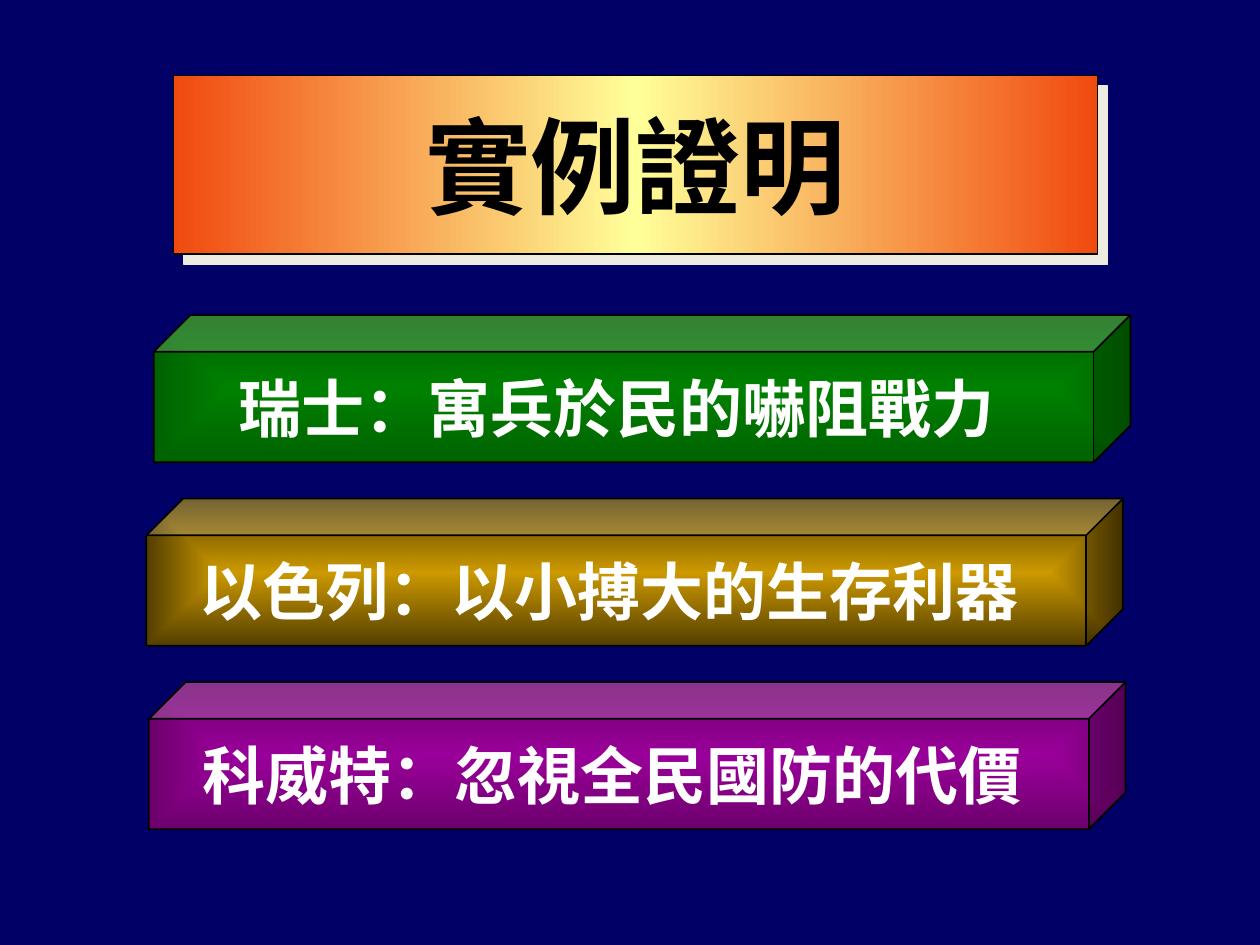
from pptx import Presentation
from pptx.dml.color import RGBColor
from pptx.enum.shapes import MSO_SHAPE
from pptx.enum.text import MSO_ANCHOR, MSO_AUTO_SIZE, PP_ALIGN
from pptx.oxml import parse_xml
from pptx.oxml.ns import nsdecls, qn
from pptx.util import Cm, Pt

FONT = "Noto Sans CJK SC"
LINEAR = '<a:lin ang="0" scaled="1"/>'
FROM_CENTRE = '<a:path path="rect"><a:fillToRect l="50000" t="50000" r="50000" b="50000"/></a:path>'
BAR_WIDTH, BAR_HEIGHT = 19.69, 2.97
FIRST_BAR_TOP, BAR_PITCH = 6.35, 3.7
BARS = [
    (3.1, "瑞士：寓兵於民的嚇阻戰力 ", "008000", "006200"),
    (2.95, "以色列：以小搏大的生存利器 ", "CC9900", "533E00"),
    (3.0, "科威特：忽視全民國防的代價 ", "990099", "6D006D"),
]


def rgb(value):
    """Return the colour for a hex string."""
    return RGBColor.from_string(value)


def fill_gradient(shape, colours, direction):
    """Fill a shape with evenly spaced gradient colours."""
    shape.fill.gradient()
    default = shape._element.spPr.find(qn("a:gradFill"))
    step = 100000 // (len(colours) - 1)
    stops = "".join(
        f'<a:gs pos="{i * step}"><a:srgbClr val="{colour}"/></a:gs>'
        for i, colour in enumerate(colours)
    )
    gradient = parse_xml(
        f'<a:gradFill {nsdecls("a")} rotWithShape="1"><a:gsLst>{stops}</a:gsLst>{direction}</a:gradFill>'
    )
    default.getparent().replace(default, gradient)


def outline(shape, width):
    """Give a shape a black outline and no inherited shadow."""
    shape.line.color.rgb = rgb("000000")
    shape.line.width = Pt(width)
    shape.shadow.inherit = False


def write(shape, text, size, colour):
    """Set one centred bold line of text."""
    frame = shape.text_frame
    frame.text = text
    frame.word_wrap = False
    frame.auto_size = MSO_AUTO_SIZE.NONE
    frame.vertical_anchor = MSO_ANCHOR.MIDDLE
    paragraph = frame.paragraphs[0]
    paragraph.alignment = PP_ALIGN.CENTER
    font = paragraph.font
    font.size, font.bold, font.name = Pt(size), True, FONT
    font.color.rgb = rgb(colour)
    properties = paragraph._p.pPr.find(qn("a:defRPr"))
    properties.find(qn("a:latin")).addnext(
        parse_xml(f'<a:ea {nsdecls("a")} typeface="{FONT}"/>')
    )


def build_banner(title, left, top, width, height):
    """Turn the title placeholder into a ribbon with a hard shadow."""
    title.left, title.top, title.width, title.height = map(Cm, (left, top, width, height))
    title._element.spPr.find(qn("a:xfrm")).addnext(parse_xml(
        f'<a:prstGeom {nsdecls("a")} prst="ribbon2"><a:avLst>'
        '<a:gd name="adj1" fmla="val 12500"/><a:gd name="adj2" fmla="val 75000"/>'
        '</a:avLst></a:prstGeom>'
    ))
    fill_gradient(title, ["F14A0F", "FFFF99", "F14A0F"], LINEAR)
    outline(title, 0.75)
    title._element.spPr.find(qn("a:effectLst")).append(parse_xml(
        f'<a:outerShdw {nsdecls("a")} dist="{Pt(8.5)}" dir="2700000" algn="ctr" rotWithShape="0">'
        '<a:srgbClr val="EEECE1"/></a:outerShdw>'
    ))
    write(title, "實例證明", 60, "000000")


def build_bar(slide, left, top, text, centre_colour, edge_colour):
    """Draw one country's bar."""
    bar = slide.shapes.add_shape(
        MSO_SHAPE.CUBE, Cm(left), Cm(top), Cm(BAR_WIDTH), Cm(BAR_HEIGHT)
    )
    bar.adjustments[0] = 0.25
    fill_gradient(bar, [centre_colour, edge_colour], FROM_CENTRE)
    outline(bar, 1)
    write(bar, text, 36, "FFFFFF")


def main():
    """Build and save the slide."""
    deck = Presentation()
    deck.slide_width, deck.slide_height = Cm(25.4), Cm(19.05)
    slide = deck.slides.add_slide(deck.slide_layouts[5])
    background = slide.background.fill
    background.solid()
    background.fore_color.rgb = rgb("000066")
    build_banner(slide.shapes.title, 3.5, 1.52, 18.62, 3.6)
    for row, (left, text, centre_colour, edge_colour) in enumerate(BARS):
        top = FIRST_BAR_TOP + row * BAR_PITCH
        build_bar(slide, left, top, text, centre_colour, edge_colour)
    deck.save("out.pptx")


if __name__ == "__main__":
    main()
